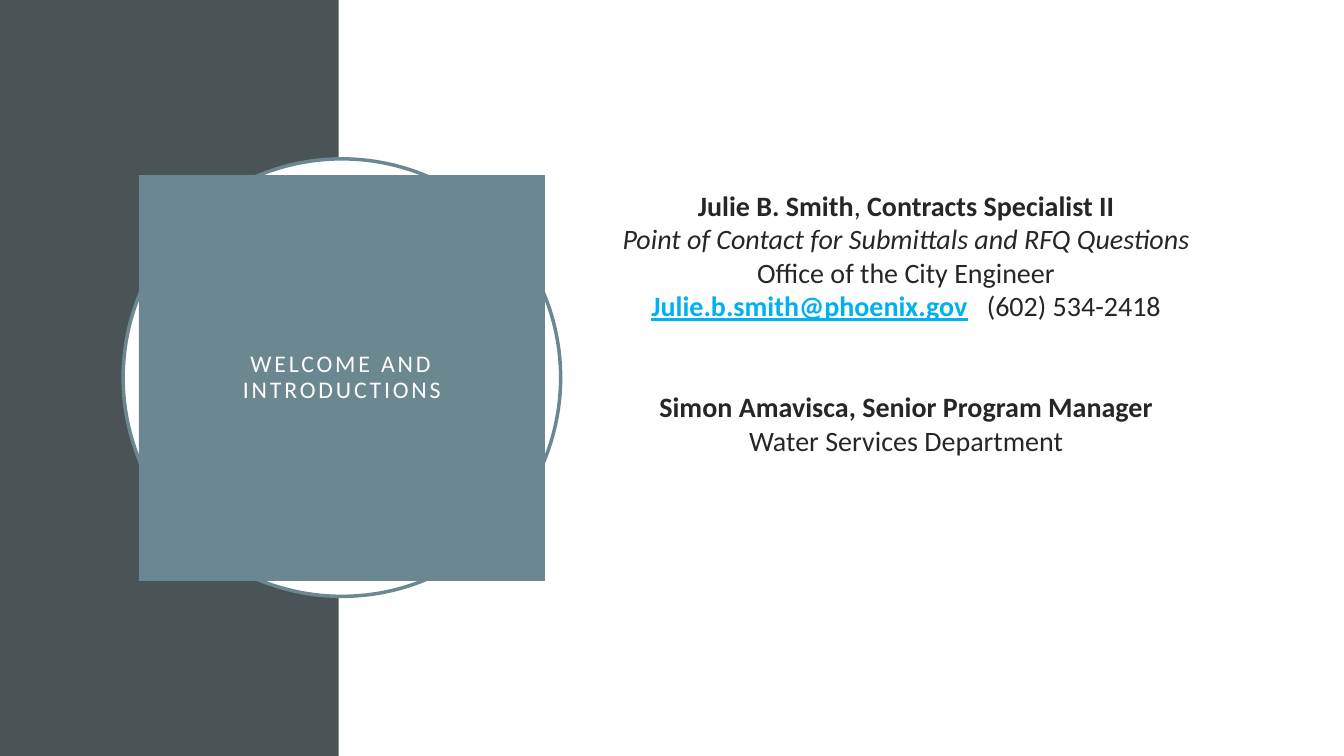
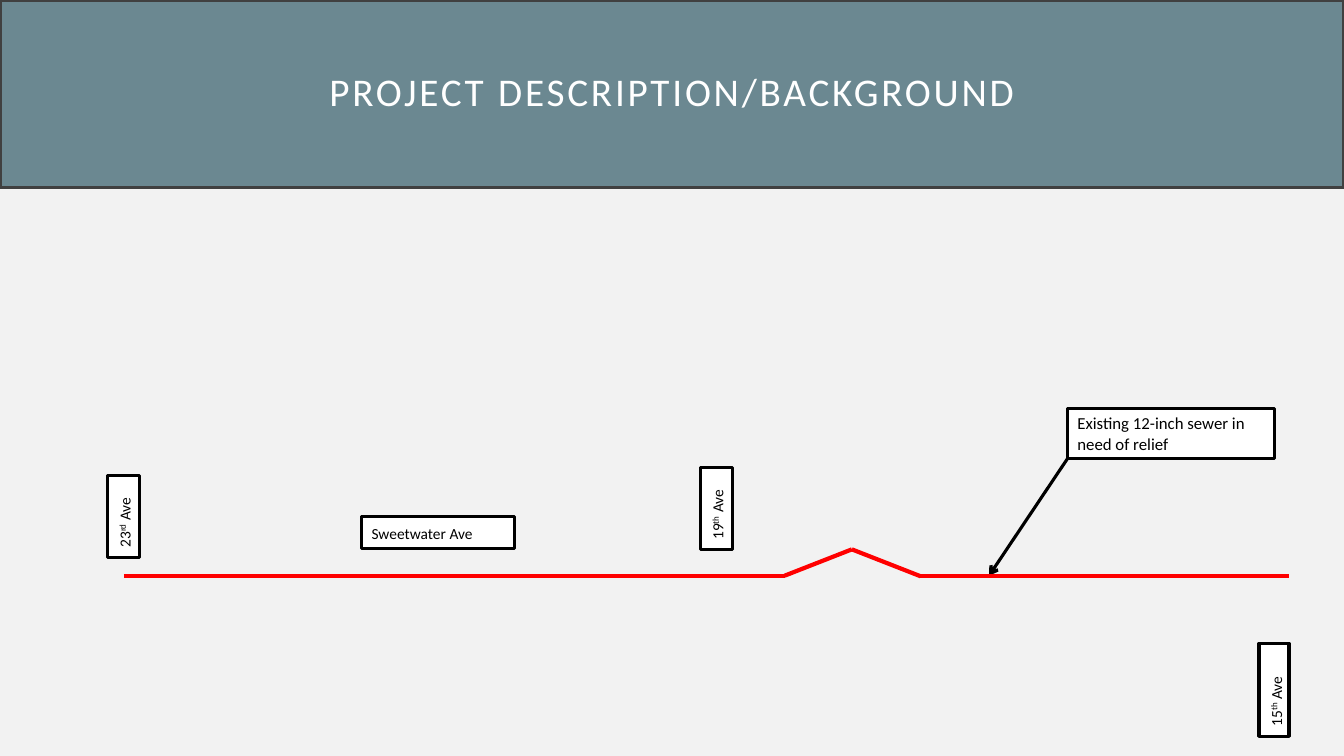
"""Build the introductions and project background slides."""
import dataclasses
import itertools

import lxml.etree
import pptx
import pptx.dml.color
import pptx.enum.shapes
import pptx.enum.text
import pptx.oxml.ns
import pptx.util

Pt = pptx.util.Pt
SHAPES = pptx.enum.shapes.MSO_SHAPE
ALIGN = pptx.enum.text.PP_ALIGN
ANCHOR = pptx.enum.text.MSO_ANCHOR


@dataclasses.dataclass(frozen=True)
class Theme:
    """Colours, type sizes and page size shared by the slides."""
    font: str = "Calibri"
    width: float = 960
    height: float = 540
    white: str = "FFFFFF"
    black: str = "000000"
    pale: str = "F2F2F2"
    slate: str = "4A5356"
    teal: str = "6B8891"
    edge: str = "404040"
    ink: str = "262626"
    link: str = "00B0F0"
    sewer: str = "FF0000"
    small_title: float = 17
    large_title: float = 28
    body: float = 20
    callout: float = 12
    label: float = 11


THEME = Theme()


@dataclasses.dataclass(frozen=True)
class Span:
    """A stretch of text with its own formatting."""
    text: str
    bold: bool = False
    italic: bool = False
    underline: bool = False
    color: str = ""
    spacing: float = 0
    raised: bool = False


def rgb(value):
    """Return the colour for a hex string."""
    return pptx.dml.color.RGBColor.from_string(value)


def add_page(deck, background):
    """Add a blank page with a plain background."""
    page = deck.slides.add_slide(deck.slide_layouts[6])
    page.background.fill.solid()
    page.background.fill.fore_color.rgb = rgb(background)
    return page


def add_block(page, kind, frame, fill, line=None, weight=2.5):
    """Add a filled preset shape, outlined when a line colour is given."""
    block = page.shapes.add_shape(kind, *map(Pt, frame))
    block.shadow.inherit = False
    block.fill.solid()
    block.fill.fore_color.rgb = rgb(fill)
    if line:
        block.line.color.rgb = rgb(line)
        block.line.width = Pt(weight)
    else:
        block.line.fill.background()
    return block


def set_up_text(box, anchor, margins):
    """Set wrapping, anchor and left, top, right, bottom margins."""
    frame = box.text_frame
    frame.word_wrap = True
    frame.vertical_anchor = anchor
    (frame.margin_left, frame.margin_top,
     frame.margin_right, frame.margin_bottom) = map(Pt, margins)
    return frame


def write(para, spans, size, color, align=ALIGN.LEFT):
    """Write formatted spans into a paragraph."""
    para.alignment = align
    for span in spans:
        run = para.add_run()
        run.text = span.text
        font = run.font
        font.name, font.size = THEME.font, Pt(size)
        font.bold, font.italic, font.underline = span.bold, span.italic, span.underline
        font.color.rgb = rgb(span.color or color)
        properties = font._element
        if span.spacing:
            properties.set("spc", str(round(span.spacing * 100)))
        if span.raised:
            properties.set("baseline", "30000")


def add_title(page, text, frame, size, line=None):
    """Add a teal title block with spaced white capitals."""
    block = add_block(page, SHAPES.RECTANGLE, frame, THEME.teal, line)
    para = set_up_text(block, ANCHOR.MIDDLE, [14.4] * 4).paragraphs[0]
    para.line_spacing = 0.9
    write(para, [Span(text, spacing=2)], size, THEME.white, ALIGN.CENTER)


def add_contacts(page, frame, groups):
    """Add centred contact lines, with a gap between groups."""
    box = page.shapes.add_textbox(*map(Pt, frame))
    text_frame = set_up_text(box, ANCHOR.TOP, (7.2, 74.5, 7.2, 3.6))
    para = text_frame.paragraphs[0]
    for group_number, group in enumerate(groups):
        for line_number, spans in enumerate(group):
            if group_number or line_number:
                para = text_frame.add_paragraph()
            para.line_spacing = Pt(24)
            if group_number and not line_number:
                para.space_before = Pt(48)
            write(para, spans, THEME.body, THEME.ink, ALIGN.CENTER)


def add_note(page, frame, spans, size):
    """Add a white note with a black outline."""
    note = add_block(page, SHAPES.RECTANGLE, frame, THEME.white, THEME.black, 2.25)
    para = set_up_text(note, ANCHOR.TOP, (7.2, 3.6, 7.2, 3.6)).paragraphs[0]
    write(para, spans, size, THEME.black)
    return note, para


def add_street(page, frame, spans, rotation=0):
    """Add a street label, turned when a rotation is given."""
    note, para = add_note(page, frame, spans, THEME.label)
    note.rotation = rotation
    para.line_spacing = 1.15
    para.space_after = Pt(10)


def add_line(page, start, end, color, weight, arrow=False):
    """Add a straight line, with an arrowhead at its end if wanted."""
    line = page.shapes.add_connector(
        pptx.enum.shapes.MSO_CONNECTOR.STRAIGHT, *map(Pt, (*start, *end)))
    line.line.color.rgb = rgb(color)
    line.line.width = Pt(weight)
    qn = pptx.oxml.ns.qn
    properties = line._element.spPr
    if arrow:
        outline = properties.find(qn("a:ln"))
        lxml.etree.SubElement(outline, qn("a:tailEnd"), type="arrow")
    lxml.etree.SubElement(properties, qn("a:effectLst"))


def build_introductions(deck):
    """Build the welcome page with its contacts."""
    page = add_page(deck, THEME.white)
    add_block(page, SHAPES.RECTANGLE, (0, 0, 242, THEME.height), THEME.slate)
    add_block(page, SHAPES.OVAL, (88, 113.5, 312.5, 312.5), THEME.white, THEME.teal)
    add_title(page, "WELCOME AND INTRODUCTIONS", (99.2, 125, 290, 290), THEME.small_title)
    add_contacts(page, (343, 59.8, 608.5, 408), [
        [
            [Span("Julie B. Smith", bold=True), Span(", "),
             Span("Contracts Specialist II", bold=True)],
            [Span("Point of Contact for Submittals and RFQ Questions", italic=True)],
            [Span("Office of the City Engineer")],
            [Span("Julie.b.smith@phoenix.gov", bold=True, underline=True, color=THEME.link),
             Span(" ", spacing=9), Span("(602) 534-2418")],
        ],
        [
            [Span("Simon Amavisca, Senior Program Manager", bold=True)],
            [Span("Water Services Department")],
        ],
    ])


def build_background(deck):
    """Build the project page with its sewer line diagram."""
    page = add_page(deck, THEME.pale)
    add_title(page, "PROJECT DESCRIPTION/BACKGROUND", (0, 0, THEME.width, 134),
              THEME.large_title, THEME.edge)
    add_note(page, (762.5, 291.6, 147.6, 36),
             [Span("Existing 12-inch sewer in need of relief")], THEME.callout)
    add_line(page, (762.5, 327.6), (706.5, 411.2), THEME.black, 2.25, arrow=True)
    sewer = [(88.5, 411.2), (560.5, 411.2), (608.5, 392.4), (657.5, 411.6), (921, 411.6)]
    for start, end in itertools.pairwise(sewer):
        add_line(page, start, end, THEME.sewer, 3)
    avenues = [
        ("23", "rd", (59, 357.5, 58.5, 23)),
        ("19", "th", (482.5, 351.8, 58.5, 23)),
        ("15", "th", (876.8, 482, 66.5, 21.5)),
    ]
    for number, suffix, frame in avenues:
        add_street(page, frame, [Span(number), Span(suffix, raised=True), Span(" Ave")], 270)
    add_street(page, (258.3, 368.8, 109.5, 23), [Span("Sweetwater Ave")])


def main():
    """Build and save the deck."""
    deck = pptx.Presentation()
    deck.slide_width, deck.slide_height = Pt(THEME.width), Pt(THEME.height)
    build_introductions(deck)
    build_background(deck)
    deck.save("out.pptx")


if __name__ == "__main__":
    main()
